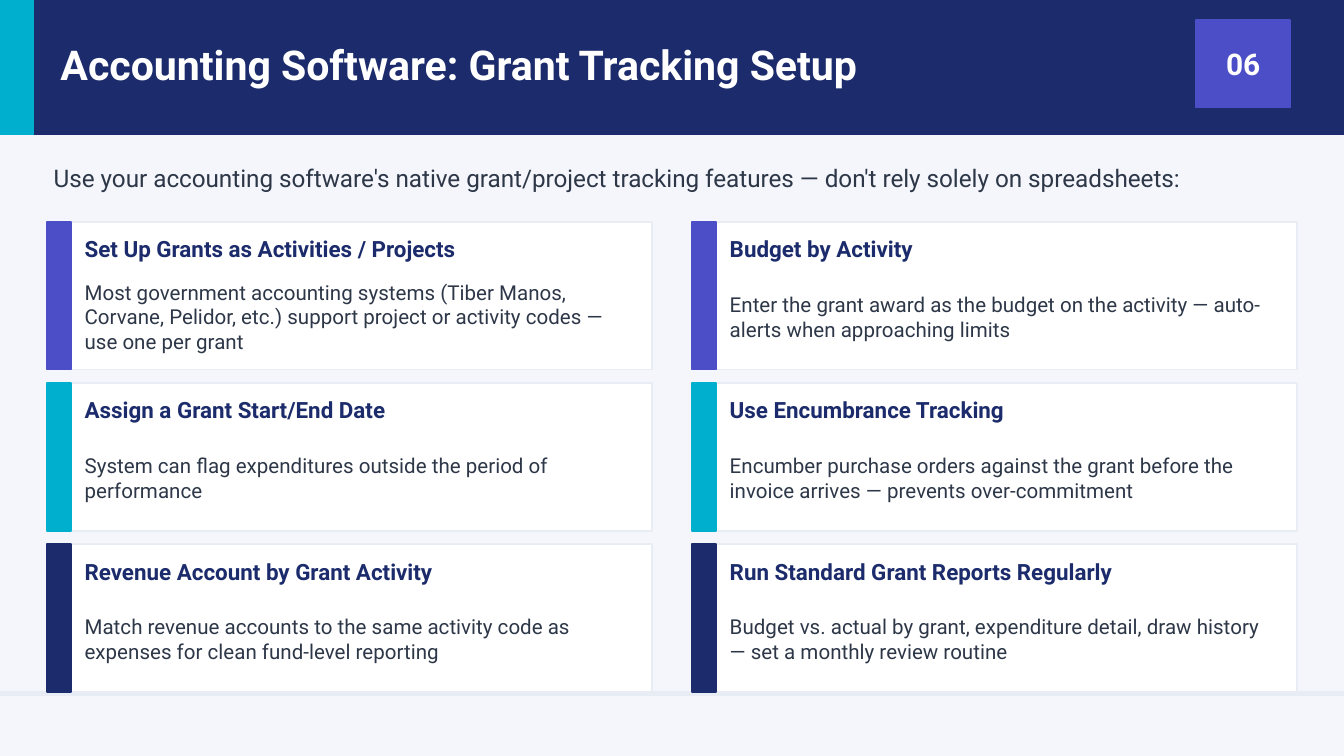
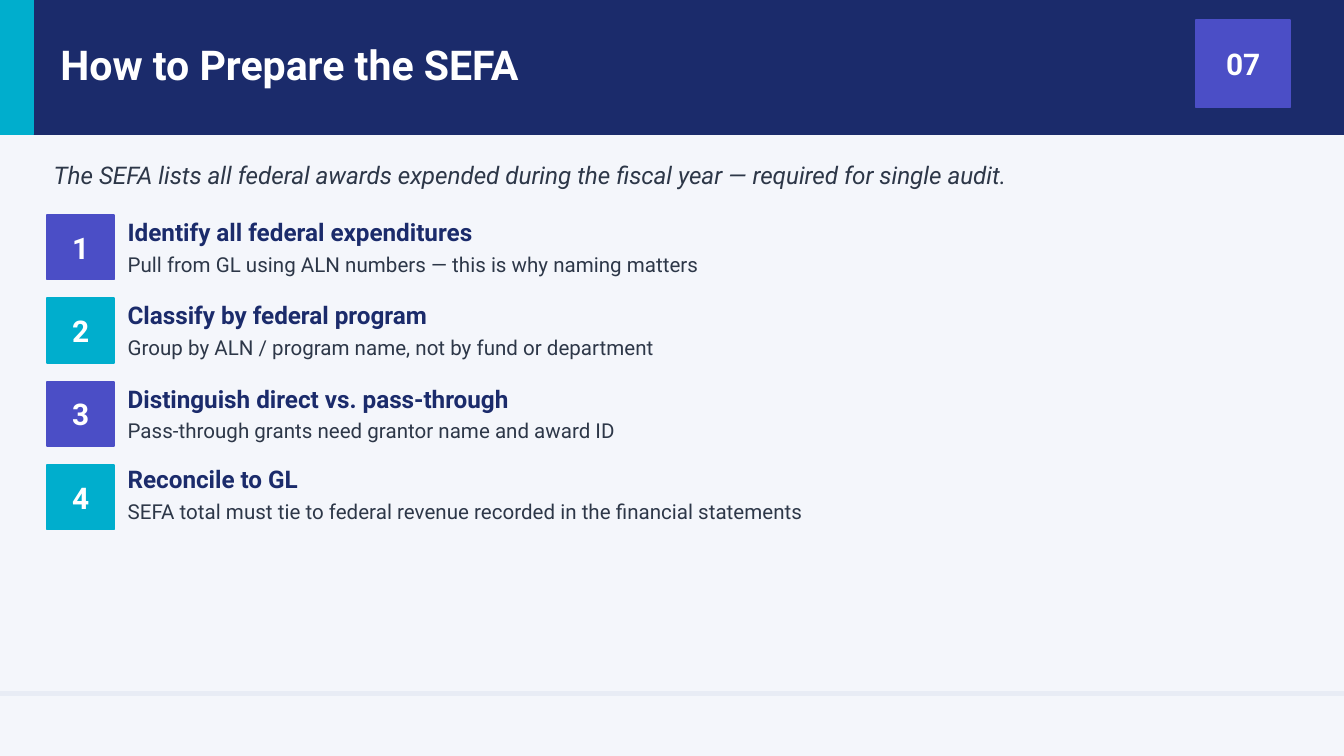
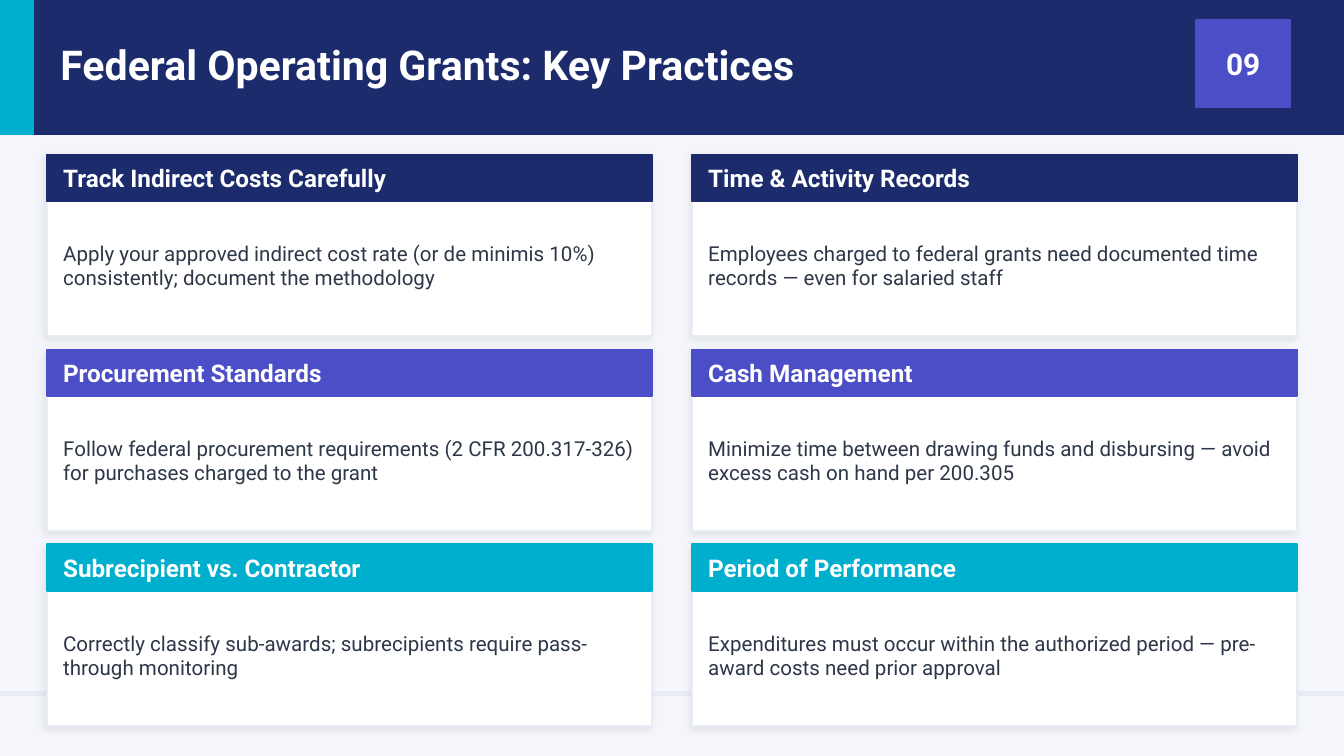
"""Build three slides on grant accounting: software setup, SEFA steps and key practices."""
from lxml.etree import SubElement
from pptx import Presentation
from pptx.dml.color import RGBColor
from pptx.enum.shapes import MSO_SHAPE as Shape
from pptx.enum.text import MSO_ANCHOR as Anchor, MSO_AUTO_SIZE as AutoSize, PP_ALIGN as Align
from pptx.oxml.ns import qn
from pptx.util import Pt

FONT = "Roboto"
COLORS = {
    "navy": "1B2B6B",
    "teal": "00AECD",
    "indigo": "4B4EC6",
    "paper": "F4F6FB",
    "white": "FFFFFF",
    "rule": "E8ECF5",
    "text": "2D3748",
}
SLIDE_WIDTH, SLIDE_HEIGHT = 720, 405
MARGIN = 25.2
CARD_WIDTH, COLUMN_PITCH, ROW_GAP = 324, 345.6, 7.2

SETUP_CARDS = [
    ("Set Up Grants as Activities / Projects",
     "Most government accounting systems (Tiber Manos, Corvane, Pelidor, etc.) support "
     "project or activity codes — use one per grant"),
    ("Budget by Activity",
     "Enter the grant award as the budget on the activity — auto-alerts when approaching limits"),
    ("Assign a Grant Start/End Date",
     "System can flag expenditures outside the period of performance"),
    ("Use Encumbrance Tracking",
     "Encumber purchase orders against the grant before the invoice arrives — "
     "prevents over-commitment"),
    ("Revenue Account by Grant Activity",
     "Match revenue accounts to the same activity code as expenses for clean "
     "fund-level reporting"),
    ("Run Standard Grant Reports Regularly",
     "Budget vs. actual by grant, expenditure detail, draw history — "
     "set a monthly review routine"),
]
SEFA_STEPS = [
    ("Identify all federal expenditures", 206, 0,
     "Pull from GL using ALN numbers — this is why naming matters"),
    ("Classify by federal program", 180, 0,
     "Group by ALN / program name, not by fund or department"),
    ("Distinguish direct vs. pass-through", 229, 0,
     "Pass-through grants need grantor name and award ID"),
    ("Reconcile to GL", 180, 1.44,
     "SEFA total must tie to federal revenue recorded in the financial statements"),
]
PRACTICE_CARDS = [
    ("Track Indirect Costs Carefully",
     "Apply your approved indirect cost rate (or de minimis 10%) consistently; "
     "document the methodology"),
    ("Time & Activity Records",
     "Employees charged to federal grants need documented time records — "
     "even for salaried staff"),
    ("Procurement Standards",
     "Follow federal procurement requirements (2 CFR 200.317-326) for purchases "
     "charged to the grant"),
    ("Cash Management",
     "Minimize time between drawing funds and disbursing — avoid excess cash on hand "
     "per 200.305"),
    ("Subrecipient vs. Contractor",
     "Correctly classify sub-awards; subrecipients require pass-through monitoring"),
    ("Period of Performance",
     "Expenditures must occur within the authorized period — pre-award costs need "
     "prior approval"),
]


def rgb(name):
    return RGBColor.from_string(COLORS[name])


def write(shape, text, size, color, bold=False, italic=False, align=Align.LEFT, indent=0):
    frame = shape.text_frame
    frame.text = text
    frame.word_wrap = True
    frame.auto_size = AutoSize.NONE
    frame.vertical_anchor = Anchor.MIDDLE
    frame.margin_left = Pt(indent)
    frame.margin_top = frame.margin_right = frame.margin_bottom = 0
    paragraph = frame.paragraphs[0]
    paragraph.alignment = align
    font = paragraph.runs[0].font
    font.name, font.size, font.bold, font.italic = FONT, Pt(size), bold, italic
    font.color.rgb = rgb(color)


def add_text(slide, left, top, width, height, text, size, color="text", **style):
    box = slide.shapes.add_textbox(Pt(left), Pt(top), Pt(width), Pt(height))
    write(box, text, size, color, **style)


def add_block(slide, left, top, width, height, fill, line=None):
    block = slide.shapes.add_shape(Shape.RECTANGLE, Pt(left), Pt(top), Pt(width), Pt(height))
    block.shadow.inherit = False
    block.fill.solid()
    block.fill.fore_color.rgb = rgb(fill)
    block.line.color.rgb = rgb(line or fill)
    block.line.width = Pt(1)
    return block


def add_number(slide, left, top, width, height, fill, number):
    block = add_block(slide, left, top, width, height, fill)
    write(block, number, 16, "white", bold=True, align=Align.CENTER)


def add_soft_shadow(shape):
    effects = shape.element.spPr.find(qn("a:effectLst"))
    shadow = SubElement(effects, qn("a:outerShdw"), blurRad=str(Pt(4)), dist=str(Pt(2)),
                        dir=str(135 * 60000), algn="bl", rotWithShape="0")
    color = SubElement(shadow, qn("a:srgbClr"), val="000000")
    SubElement(color, qn("a:alpha"), val="8000")


def add_titled_slide(presentation, title_text, number):
    slide = presentation.slides.add_slide(presentation.slide_layouts[5])
    add_block(slide, 0, 0, SLIDE_WIDTH, 72, "navy")
    add_block(slide, 0, 0, 18, 72, "teal")
    title = slide.shapes.title
    title.left, title.top, title.width, title.height = Pt(32.4), Pt(7.2), Pt(612), Pt(54)
    write(title, title_text, 22, "white", bold=True)
    title.element.getparent().append(title.element)
    add_number(slide, 640.8, 10.8, 50.4, 46.8, "indigo", number)
    add_block(slide, 0, 370.8, SLIDE_WIDTH, 1.44, "rule")
    return slide


def add_side_bar_card(slide, left, top, height, color, heading, body):
    add_block(slide, left, top, CARD_WIDTH, height, "white", "rule")
    add_block(slide, left, top, 13, height, color)
    add_text(slide, left + 20.16, top + 3.6, 295.2, 21.6, heading, 12, "navy", bold=True)
    add_text(slide, left + 20.16, top + 27.36, 295.2, 46.8, body, 11)


def add_header_card(slide, left, top, height, color, heading, body):
    card = add_block(slide, left, top, CARD_WIDTH, height, "white", "rule")
    add_soft_shadow(card)
    header = add_block(slide, left, top, CARD_WIDTH, 25.2, color)
    write(header, heading, 13, "white", bold=True, indent=8.64)
    add_text(slide, left + 8.64, top + 28.8, 309.6, 61.2, body, 11)


def add_card_grid(slide, add_card, cards, top, height, row_colors):
    for index, (heading, body) in enumerate(cards):
        row, column = divmod(index, 2)
        add_card(slide, MARGIN + column * COLUMN_PITCH, top + row * (height + ROW_GAP),
                 height, row_colors[row], heading, body)


def add_steps(slide, steps):
    for index, (heading, width, lift, detail) in enumerate(steps):
        top = 115.2 + index * 44.64
        color = ("indigo", "teal")[index % 2]
        add_number(slide, MARGIN, top, 36, 34.56, color, str(index + 1))
        add_text(slide, 68.4, top - lift, width, 18, heading, 13, "navy", bold=True)
        add_text(slide, 68.4, top - lift + 17.28, 619.2, 18, detail, 11)


def main():
    presentation = Presentation()
    presentation.slide_width, presentation.slide_height = Pt(SLIDE_WIDTH), Pt(SLIDE_HEIGHT)
    background = presentation.slide_master.background.fill
    background.solid()
    background.fore_color.rgb = rgb("paper")

    setup = add_titled_slide(presentation, "Accounting Software: Grant Tracking Setup", "06")
    add_text(setup, 28.8, 79.2, 662.4, 32.4,
             "Use your accounting software's native grant/project tracking features — "
             "don't rely solely on spreadsheets:", 13)
    add_card_grid(setup, add_side_bar_card, SETUP_CARDS, 118.8, 79.2,
                  ("indigo", "teal", "navy"))

    sefa = add_titled_slide(presentation, "How to Prepare the SEFA", "07")
    add_text(sefa, 28.8, 79.2, 662.4, 28.8,
             "The SEFA lists all federal awards expended during the fiscal year — "
             "required for single audit.", 13, italic=True)
    add_steps(sefa, SEFA_STEPS)

    practices = add_titled_slide(presentation, "Federal Operating Grants: Key Practices", "09")
    add_card_grid(practices, add_header_card, PRACTICE_CARDS, 82.8, 97.2,
                  ("navy", "indigo", "teal"))

    presentation.save("out.pptx")


if __name__ == "__main__":
    main()
